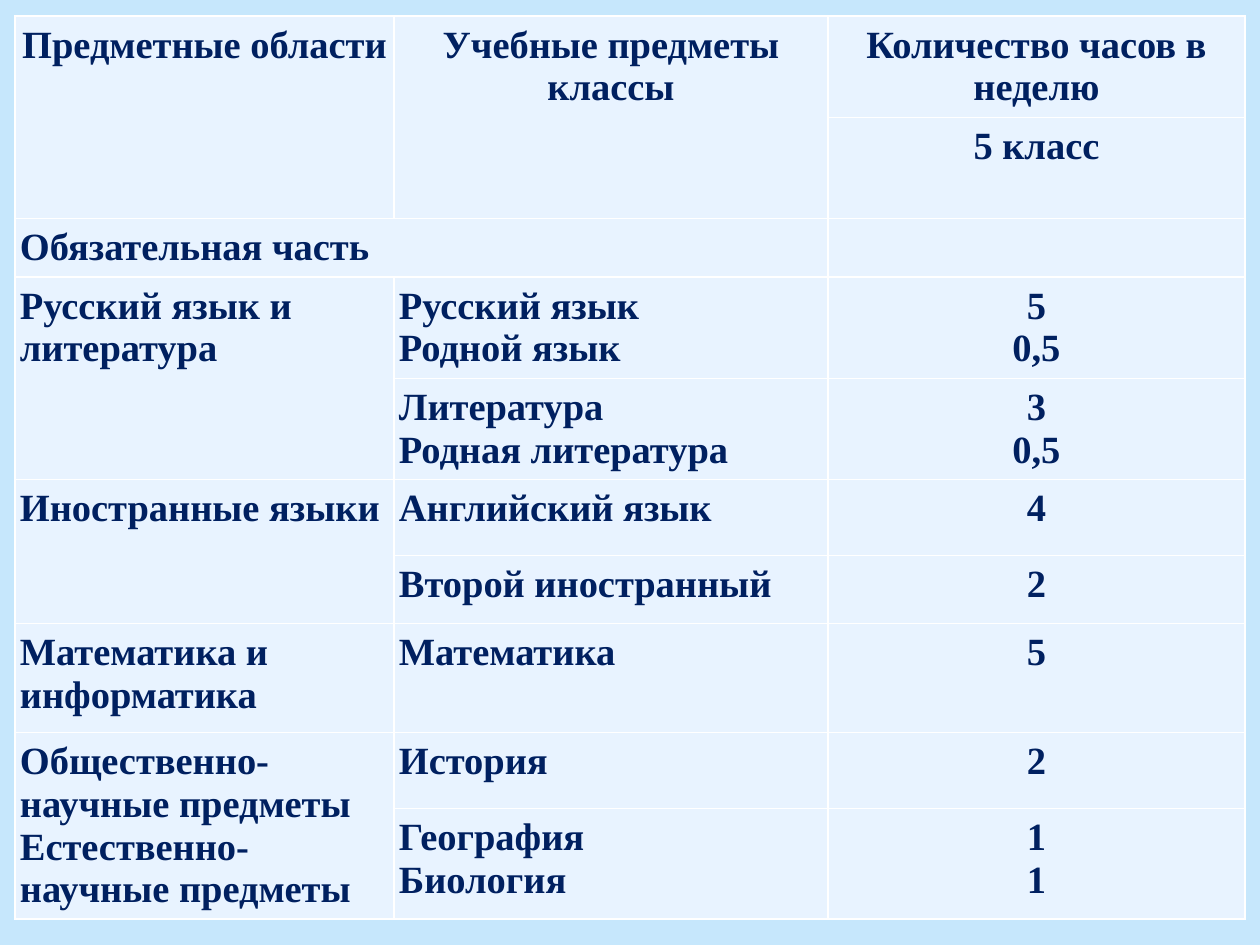
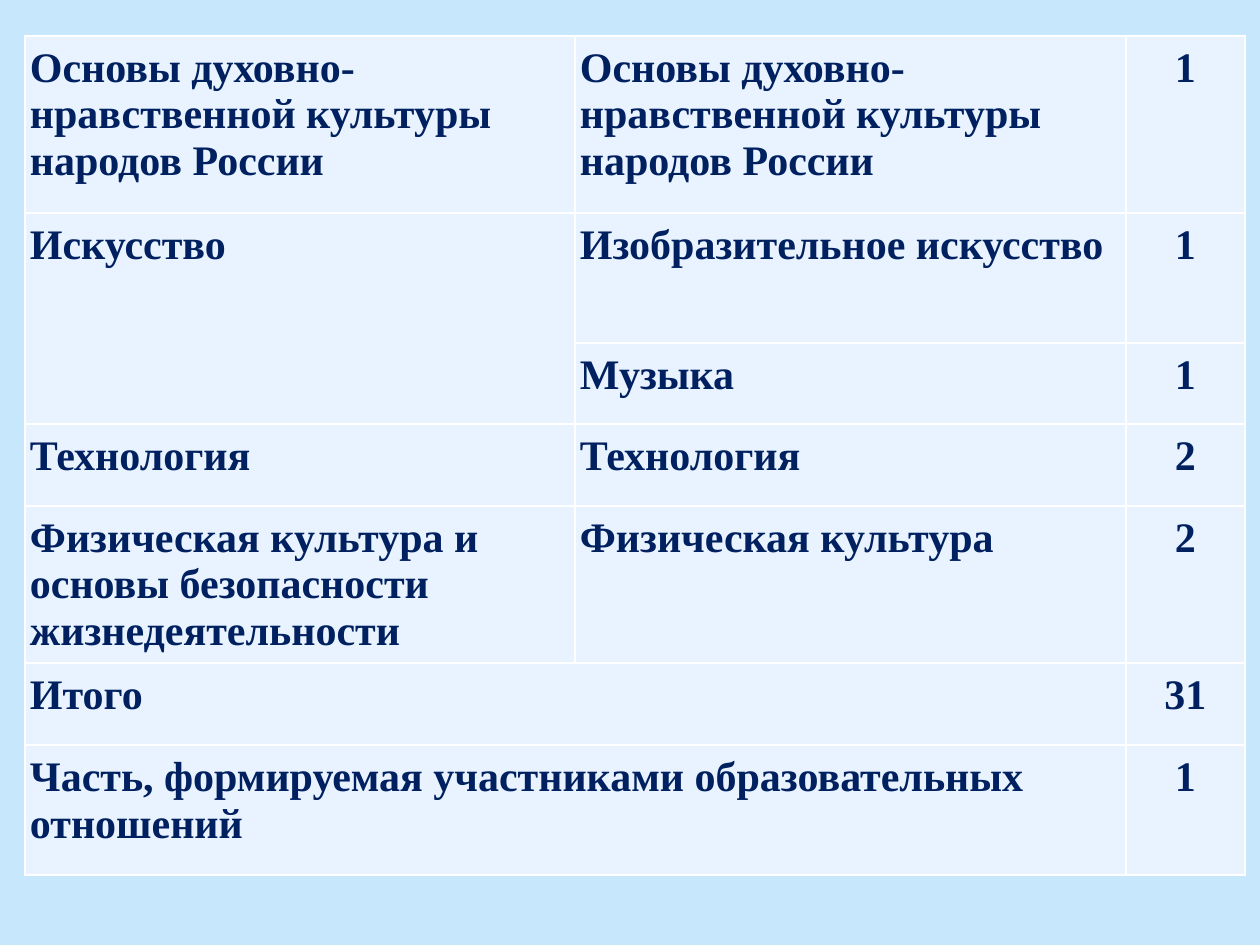
"""Build two slides with the weekly curriculum of the fifth grade."""
from lxml.etree import SubElement
from pptx import Presentation
from pptx.dml.color import RGBColor as Rgb
from pptx.enum.text import PP_ALIGN as Align
from pptx.oxml.ns import qn
from pptx.util import Emu, Pt

COLORS = {"background": "C6E7FC", "cell": "E8F3FF", "text": "002060", "border": "FFFFFF"}
FONT = "Times New Roman"
SIDE_INSET = 5
HOURS_COLUMN = 2


def px(length):
    """Turn pixels into EMU at 126 pixels to the inch."""
    return Emu(round(length * 914400 / 126))


def add_borders(cell):
    """Draw a thin border on all four sides of a cell."""
    properties = cell._tc.get_or_add_tcPr()
    for side in ("lnL", "lnR", "lnT", "lnB"):
        line = SubElement(properties, qn(f"a:{side}"), w=str(Pt(1)))
        fill = SubElement(line, qn("a:solidFill"))
        SubElement(fill, qn("a:srgbClr"), val=COLORS["border"])


curriculum = [
    {
        "left": 15, "top": 16, "size": 22, "inset": 8, "header_rows": 2,
        "widths": [379, 434, 417],
        "heights": [101, 101, 58, 101, 101, 76, 68, 109, 76, 110],
        "merges": [(0, 0, 1, 0), (0, 1, 1, 1), (2, 0, 2, 1),
                   (3, 0, 4, 0), (5, 0, 6, 0), (8, 0, 9, 0)],
        "rows": [
            ("Предметные области", "Учебные предметы классы", "Количество часов в неделю"),
            ("", "", "5 класс"),
            ("Обязательная часть", "", ""),
            ("Русский язык и литература", "Русский язык\nРодной язык", "5\n0,5"),
            ("", "Литература\nРодная литература", "3\n0,5"),
            ("Иностранные языки", "Английский язык", "4"),
            ("", "Второй иностранный", "2"),
            ("Математика и информатика", "Математика", "5"),
            ("Общественно-научные предметы\nЕстественно-научные предметы", "История", "2"),
            ("", "География\nБиология", "1\n1"),
        ],
    },
    {
        "left": 25, "top": 36, "size": 24, "inset": 9, "header_rows": 0,
        "widths": [550, 551, 119],
        "heights": [177, 130, 81, 82, 157, 82, 130],
        "merges": [(1, 0, 2, 0), (5, 0, 5, 1), (6, 0, 6, 1)],
        "rows": [
            ("Основы духовно-нравственной культуры народов России",
             "Основы духовно-нравственной культуры народов России", "1"),
            ("Искусство", "Изобразительное искусство", "1"),
            ("", "Музыка", "1"),
            ("Технология", "Технология", "2"),
            ("Физическая культура и основы безопасности жизнедеятельности",
             "Физическая культура", "2"),
            ("Итого", "", "31"),
            ("Часть, формируемая участниками образовательных отношений", "", "1"),
        ],
    },
]

deck = Presentation()
deck.slide_width, deck.slide_height = px(1260), px(945)

for part in curriculum:
    slide = deck.slides.add_slide(deck.slide_layouts[6])
    slide.background.fill.solid()
    slide.background.fill.fore_color.rgb = Rgb.from_string(COLORS["background"])

    widths, heights = part["widths"], part["heights"]
    subjects = slide.shapes.add_table(
        len(heights), len(widths), px(part["left"]), px(part["top"]),
        px(sum(widths)), px(sum(heights))).table
    subjects.first_row = subjects.horz_banding = False
    for column, width in zip(subjects.columns, widths):
        column.width = px(width)
    for row, height in zip(subjects.rows, heights):
        row.height = px(height)

    cell_format = {
        "margin_left": px(SIDE_INSET), "margin_right": px(SIDE_INSET),
        "margin_top": px(part["inset"]), "margin_bottom": px(part["inset"]),
    }
    font_format = {"name": FONT, "size": Pt(part["size"]), "bold": True}

    for r, entries in enumerate(part["rows"]):
        for c, entry in enumerate(entries):
            cell = subjects.cell(r, c)
            cell.text = entry
            for name, value in cell_format.items():
                setattr(cell, name, value)
            add_borders(cell)
            cell.fill.solid()
            cell.fill.fore_color.rgb = Rgb.from_string(COLORS["cell"])
            centred = c == HOURS_COLUMN or r < part["header_rows"]
            for paragraph in cell.text_frame.paragraphs:
                paragraph.alignment = Align.CENTER if centred else Align.LEFT
                for run in paragraph.runs:
                    for name, value in font_format.items():
                        setattr(run.font, name, value)
                    run.font.color.rgb = Rgb.from_string(COLORS["text"])

    for top, left, bottom, right in part["merges"]:
        subjects.cell(top, left).merge(subjects.cell(bottom, right))

deck.save("out.pptx")
